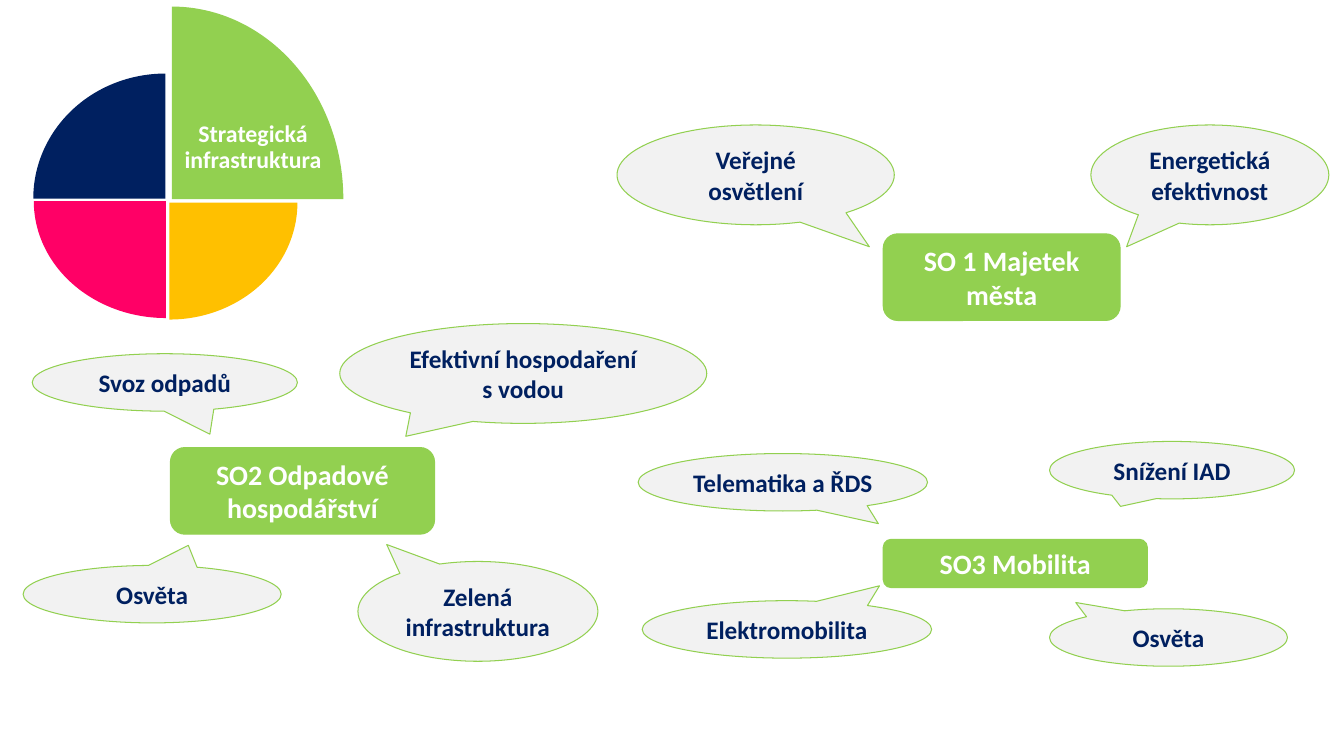
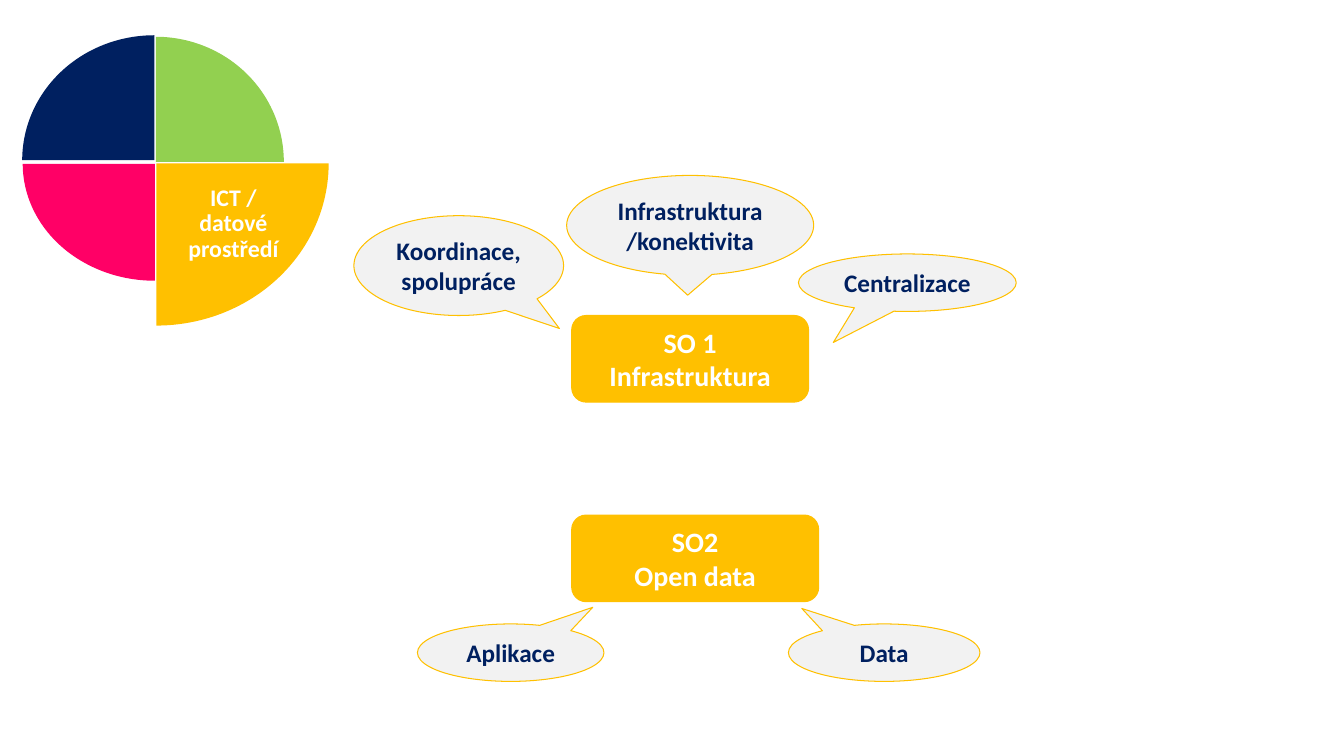
"""Build two slides of strategic goals, each with a quartered pie and callouts."""
from pptx import Presentation
from pptx.dml.color import RGBColor
from pptx.enum.shapes import MSO_SHAPE
from pptx.enum.text import MSO_ANCHOR, MSO_AUTO_SIZE, PP_ALIGN
from pptx.util import Inches, Pt

WEDGE = MSO_SHAPE.PIE_WEDGE
GOAL = MSO_SHAPE.ROUNDED_RECTANGLE
CALLOUT = MSO_SHAPE.OVAL_CALLOUT
CENTER = PP_ALIGN.CENTER
MIDDLE = MSO_ANCHOR.MIDDLE
GROW = MSO_AUTO_SIZE.SHAPE_TO_FIT_TEXT

COLORS = {
    "navy": "002060",
    "green": "92D050",
    "amber": "FFC000",
    "pink": "FF0066",
    "pale": "F2F2F2",
    "white": "FFFFFF",
}
QUARTERS = ["navy", "green", "amber", "pink"]
ONE_LINE, TWO_LINES = 0.57, 0.99

SLIDES = [
    {
        "accent": "green",
        "wedges": [(0.33, 0.73, 1.31, 1.24), (1.6, 0.17, 1.91, 1.7),
                   (1.68, 2.01, 1.27, 1.16), (0.41, 1.92, 1.16, 1.31)],
        "area": ("Strategická infrastruktura", (1.69, 0.81, 1.64, 1.31)),
        "goals": [
            ("SO 1 Majetek města", (8.76, 2.32, 2.35, 0.86)),
            ("SO2 Odpadové hospodářství", (1.69, 4.44, 2.62, 0.86)),
            ("SO3 Mobilita", (8.76, 5.35, 2.62, 0.48)),
        ],
        "callouts": [
            ("Veřejné osvětlení", (6.12, 1.24, 2.75, TWO_LINES), (0.41, 0.72)),
            ("Energetická efektivnost", (10.82, 1.24, 2.36, TWO_LINES), (-0.35, 0.72)),
            ("Svoz odpadů", (0.32, 3.51, 2.63, ONE_LINE), (0.17, 0.9)),
            ("Efektivní hospodaření s vodou", (3.37, 3.21, 3.64, TWO_LINES), (-0.32, 0.63)),
            ("Osvěta", (0.23, 5.61, 2.56, ONE_LINE), (0.14, -0.85)),
            ("Zelená infrastruktura", (3.55, 5.57, 2.38, TWO_LINES), (-0.38, -0.67)),
            ("Telematika a ŘDS", (6.33, 4.5, 2.87, ONE_LINE), (0.33, 0.72)),
            ("Snížení IAD", (10.41, 4.38, 2.43, ONE_LINE), (-0.21, 0.63)),
            ("Elektromobilita", (6.37, 5.96, 2.87, ONE_LINE), (0.32, -0.76)),
            ("Osvěta", (10.41, 6.04, 2.36, ONE_LINE), (-0.39, -0.61)),
        ],
    },
    {
        "accent": "amber",
        "wedges": [(0.22, 0.35, 1.31, 1.24), (1.56, 0.35, 1.24, 1.27),
                   (1.55, 1.62, 1.71, 1.61), (0.3, 1.55, 1.16, 1.31)],
        "area": ("ICT / datové prostředí", (1.65, 1.55, 1.33, 1.35)),
        "goals": [
            ("SO 1 Infrastruktura", (5.67, 3.13, 2.35, 0.86)),
            ("SO2\nOpen data", (5.67, 5.11, 2.45, 0.86)),
        ],
        "callouts": [
            ("Koordinace, spolupráce", (3.51, 2.14, 2.08, TWO_LINES), (0.48, 0.63)),
            ("Infrastruktura/konektivita", (5.62, 1.74, 2.45, TWO_LINES), (-0.01, 0.7)),
            ("Centralizace", (7.92, 2.52, 2.16, ONE_LINE), (-0.34, 1.04)),
            ("Aplikace", (4.14, 6.19, 1.85, ONE_LINE), (0.44, -0.79)),
            ("Data", (7.82, 6.19, 1.9, ONE_LINE), (-0.43, -0.77)),
        ],
    },
]


def add_filled(slide, preset, place, fill, outline=None):
    shape = slide.shapes.add_shape(preset, *map(Inches, place))
    shape.shadow.inherit = False
    shape.fill.solid()
    shape.fill.fore_color.rgb = RGBColor.from_string(COLORS[fill])
    if outline:
        shape.line.color.rgb = RGBColor.from_string(COLORS[outline])
        shape.line.width = Pt(0.75)
    else:
        shape.line.fill.background()
    return shape


def write(shape, text, size, color):
    frame = shape.text_frame
    frame.text = text
    frame.word_wrap = True
    frame.vertical_anchor = MIDDLE
    for paragraph in frame.paragraphs:
        paragraph.alignment = CENTER
        paragraph.font.name = "Calibri"
        paragraph.font.size = Pt(size)
        paragraph.font.bold = True
        paragraph.font.color.rgb = RGBColor.from_string(COLORS[color])
    return frame


prs = Presentation()
prs.slide_width = Inches(13.33)
prs.slide_height = Inches(7.5)

for content in SLIDES:
    slide = prs.slides.add_slide(prs.slide_layouts[6])
    accent = content["accent"]

    for turn, (color, place) in enumerate(zip(QUARTERS, content["wedges"])):
        wedge = add_filled(slide, WEDGE, place, color)
        wedge.rotation = 90 * turn

    text, place = content["area"]
    area = slide.shapes.add_textbox(*map(Inches, place))
    frame = write(area, text, 17, "white")
    frame.margin_left = frame.margin_right = Inches(0.1)
    frame.margin_top = frame.margin_bottom = Inches(0.1)
    frame.paragraphs[0].line_spacing = 0.9

    for text, place in content["goals"]:
        goal = add_filled(slide, GOAL, place, accent, accent)
        write(goal, text, 20, "white").auto_size = GROW

    for text, place, tip in content["callouts"]:
        callout = add_filled(slide, CALLOUT, place, "pale", accent)
        callout.adjustments[0], callout.adjustments[1] = tip
        write(callout, text, 18, "navy").auto_size = GROW

prs.save("out.pptx")
